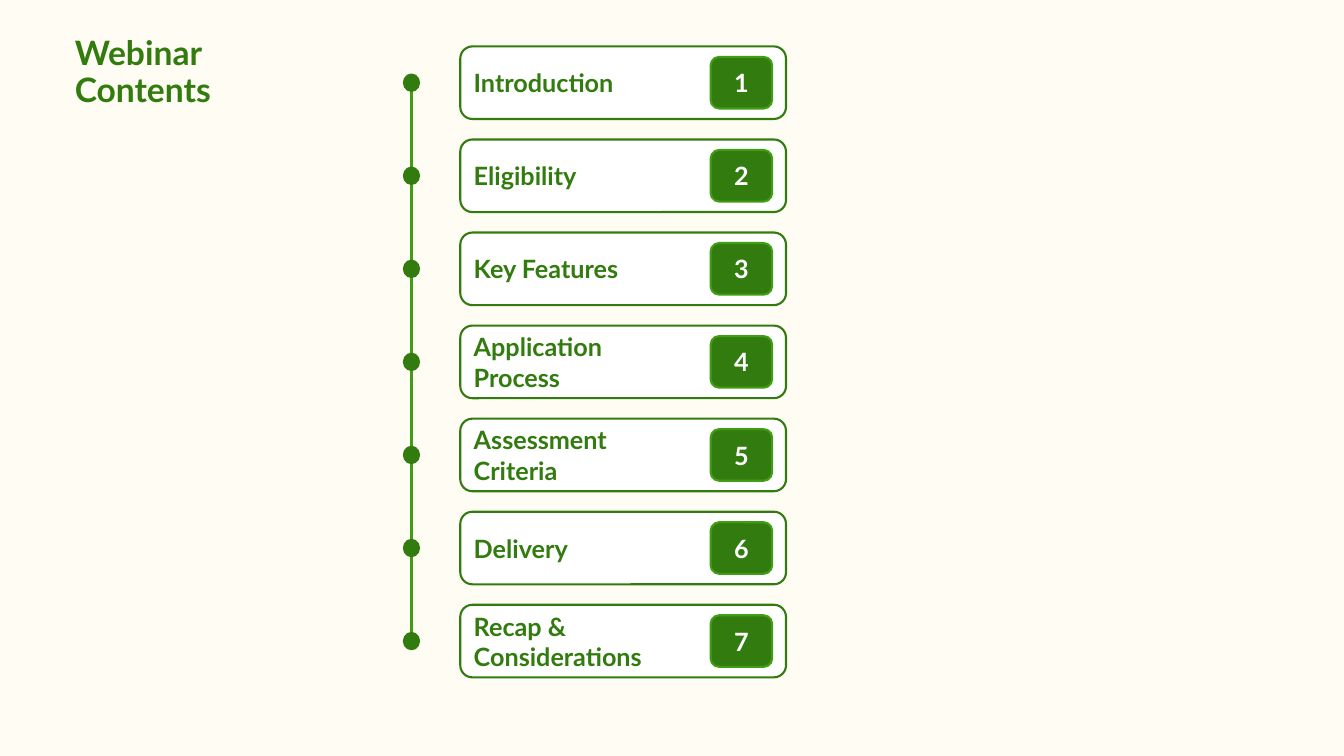
from lxml import etree
from pptx import Presentation
from pptx import util as u
from pptx.dml.color import RGBColor
from pptx.enum import shapes, text
from pptx.oxml import ns

TITLE = "Webinar Contents"
TOPICS = [
    "Introduction",
    "Eligibility",
    "Key Features",
    "Application\nProcess",
    "Assessment\nCriteria",
    "Delivery",
    "Recap &\nConsiderations",
]

FONT = "Lato"
CREAM = RGBColor(0xFF, 0xFC, 0xF3)
WHITE = RGBColor(0xFF, 0xFF, 0xFF)
GREEN = RGBColor(0x32, 0x7B, 0x0F)
BRIGHT_GREEN = RGBColor(0x41, 0x9D, 0x13)
LINE_WIDTH = u.Pt(1.5)

# Lengths in centimetres
FIRST_TOP, ROW_PITCH = 1.17, 2.345
CARD_LEFT, CARD_WIDTH, CARD_HEIGHT = 11.6, 8.21, 1.83
BADGE_LEFT, BADGE_WIDTH, BADGE_HEIGHT = 17.91, 1.55, 1.3
DOT_WIDTH, DOT_HEIGHT = 0.38, 0.41
TIMELINE_X = 10.37


def write_text(shape, content, size=18, color=GREEN, align=text.PP_ALIGN.LEFT, spacing=None):
    frame = shape.text_frame
    frame.text = content
    frame.word_wrap = True
    frame.auto_size = text.MSO_AUTO_SIZE.NONE
    frame.vertical_anchor = text.MSO_ANCHOR.MIDDLE
    for paragraph in frame.paragraphs:
        paragraph.alignment = align
        paragraph.line_spacing = spacing
        font = paragraph.runs[0].font
        font.name, font.size, font.bold = FONT, u.Pt(size), True
        font.color.rgb = color


def add_centred_shape(slide, kind, left, middle, width, height, fill, line):
    """Add a flat shape whose vertical centre is at middle."""
    shape = slide.shapes.add_shape(
        kind, u.Cm(left), u.Cm(middle - height / 2), u.Cm(width), u.Cm(height))
    shape.shadow.inherit = False
    shape.fill.solid()
    shape.fill.fore_color.rgb = fill
    shape.line.color.rgb = line
    shape.line.width = LINE_WIDTH
    return shape


def add_timeline(slide, top, bottom):
    x = u.Cm(TIMELINE_X)
    timeline = slide.shapes.add_connector(
        shapes.MSO_CONNECTOR.STRAIGHT, x, u.Cm(top), x, u.Cm(bottom))
    timeline.line.color.rgb = BRIGHT_GREEN
    timeline.line.width = LINE_WIDTH
    etree.SubElement(timeline._element.spPr, ns.qn("a:effectLst"))


def main():
    presentation = Presentation()
    presentation.slide_width, presentation.slide_height = u.Cm(33.87), u.Cm(19.05)
    slide = presentation.slides.add_slide(presentation.slide_layouts[5])
    slide.background.fill.solid()
    slide.background.fill.fore_color.rgb = CREAM

    title = slide.shapes.title
    title.left, title.top, title.width, title.height = u.Cm(1.63), u.Cm(0), u.Cm(7.15), u.Cm(3.68)
    write_text(title, TITLE, size=24, spacing=0.9)

    middles = [FIRST_TOP + CARD_HEIGHT / 2 + row * ROW_PITCH for row in range(len(TOPICS))]
    add_timeline(slide, middles[0], middles[-1])

    rounded, oval = shapes.MSO_SHAPE.ROUNDED_RECTANGLE, shapes.MSO_SHAPE.OVAL
    for number, (topic, middle) in enumerate(zip(TOPICS, middles), start=1):
        card = add_centred_shape(
            slide, rounded, CARD_LEFT, middle, CARD_WIDTH, CARD_HEIGHT, WHITE, GREEN)
        write_text(card, topic)
        badge = add_centred_shape(
            slide, rounded, BADGE_LEFT, middle, BADGE_WIDTH, BADGE_HEIGHT, GREEN, BRIGHT_GREEN)
        write_text(badge, str(number), color=WHITE, align=text.PP_ALIGN.CENTER)
        add_centred_shape(
            slide, oval, TIMELINE_X - DOT_WIDTH / 2, middle, DOT_WIDTH, DOT_HEIGHT, GREEN, GREEN)

    presentation.save("out.pptx")


if __name__ == "__main__":
    main()
